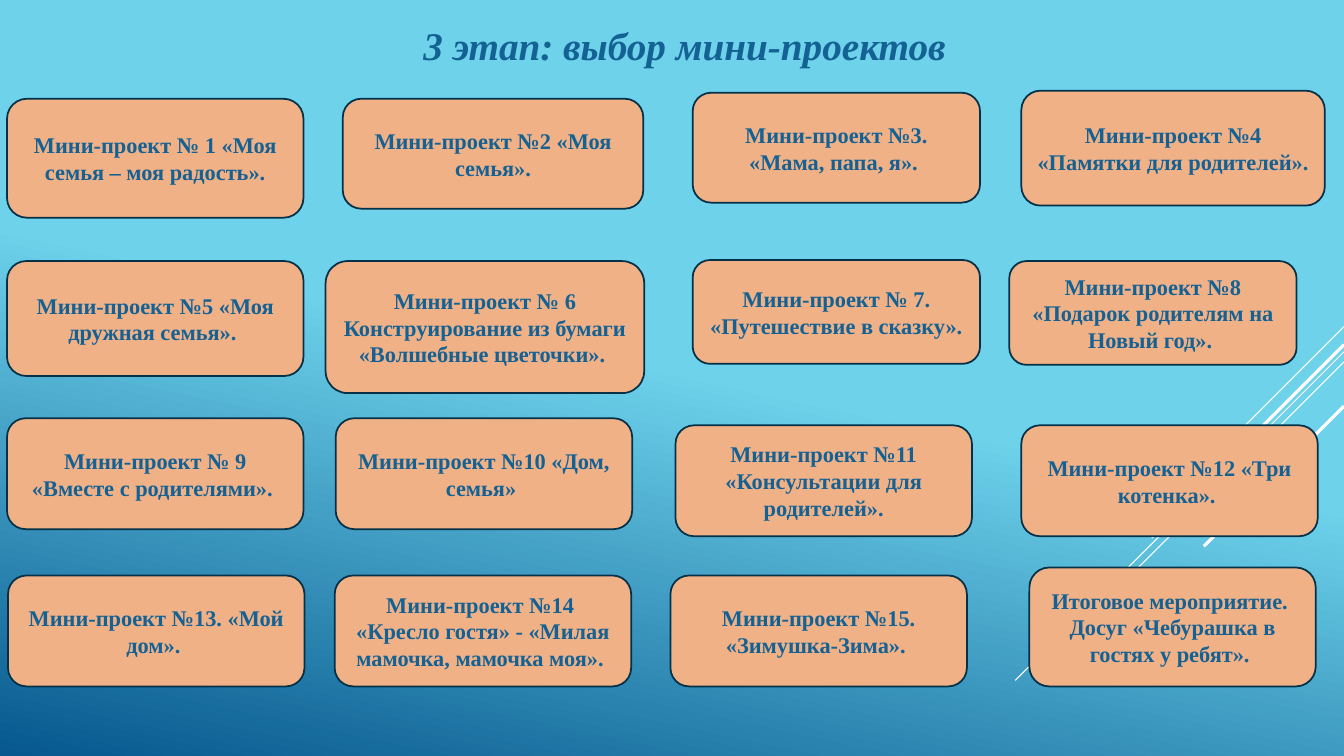
"""Build the slide that lists the mini-projects of stage three."""
from pptx import Presentation
from pptx.dml.color import RGBColor
from pptx.enum.shapes import MSO_CONNECTOR as Conn, MSO_SHAPE as Shape
from pptx.enum.text import MSO_ANCHOR as Anchor, MSO_AUTO_SIZE as Fit, PP_ALIGN as Align
from pptx.oxml.ns import qn
from pptx.util import Pt
from lxml.etree import SubElement

PX = 9144
WIDE, HIGH = 1333, 750
FONT = "Times New Roman"
INK, PEACH, EDGE, WHITE = "146194", "F1B187", "043148", "FFFFFF"
SKY = [("6ED2EB", 0.49), ("06588E", 1)]
ANGLE = 102

TITLE = "3 этап: выбор мини-проектов"
TITLE_BOX = (410, 16, 554, 57)

# top at right edge, run, weight
RAYS = [(324, 100, 0.75), (349, 326, 0.75), (359, 207, 0.75),
        (342, 191, 2.25), (403, 139, 2.25)]

CARDS = [
    ("Мини-проект № 1 «Моя семья – моя радость».", (7, 98, 294, 118)),
    ("Мини-проект №2 «Моя семья».", (340, 98, 298, 109)),
    ("Мини-проект №3. «Мама, папа, я». ", (687, 92, 285, 109)),
    ("Мини-проект №4 «Памятки для родителей». ", (1013, 90, 301, 114)),
    ("Мини-проект №5 «Моя дружная семья». ", (7, 259, 294, 114)),
    ("Мини-проект № 6 Конструирование из бумаги «Волшебные цветочки». ",
     (323, 259, 316, 131)),
    ("Мини-проект № 7. «Путешествие в сказку».", (687, 258, 285, 103)),
    ("Мини-проект №8 «Подарок родителям на Новый год». ", (1001, 259, 285, 103)),
    ("Мини-проект № 9 «Вместе с родителями». ", (7, 415, 294, 110)),
    ("Мини-проект №10 «Дом, семья» ", (333, 415, 294, 110)),
    ("Мини-проект №11 «Консультации для родителей».", (670, 422, 294, 110)),
    ("Мини-проект №12 «Три котенка». ", (1013, 422, 294, 110)),
    ("Мини-проект №13. «Мой дом». ", (8, 571, 294, 110)),
    ("Мини-проект №14 \n«Кресло гостя» - «Милая мамочка, мамочка моя». ",
     (332, 571, 294, 110)),
    ("Мини-проект №15. «Зимушка-Зима». ", (665, 571, 294, 110)),
    ("Итоговое мероприятие.  Досуг «Чебурашка в гостях у ребят». ",
     (1021, 563, 284, 118)),
]


def emu(*nums):
    return [n * PX for n in nums]


def tint(obj, code):
    obj.rgb = RGBColor.from_string(code)


def write(para, text, size, slant=False):
    for i, part in enumerate(text.split("\n")):
        if i:
            para.add_line_break()
        run = para.add_run()
        run.text = part
        font = run.font
        font.name, font.size, font.bold, font.italic = FONT, Pt(size), True, slant
        tint(font.color, INK)


def paint(slide):
    fill = slide.background.fill
    fill.gradient()
    fill.gradient_angle = 360 - ANGLE
    for stop, (code, place) in zip(fill.gradient_stops, SKY):
        tint(stop.color, code)
        stop.position = place


def head(slide):
    title = slide.shapes.title
    title.left, title.top, title.width, title.height = emu(*TITLE_BOX)
    frame = title.text_frame
    frame.word_wrap = False
    frame.auto_size = Fit.NONE
    frame.vertical_anchor = Anchor.TOP
    para = frame.paragraphs[0]
    para.alignment = Align.LEFT
    write(para, TITLE, 28, True)


def ray(slide, top, run, weight):
    ends = emu(WIDE, top, WIDE - run, top + run)
    line = slide.shapes.add_connector(Conn.STRAIGHT, *ends)
    tint(line.line.color, WHITE)
    line.line.width = Pt(weight)
    SubElement(line._element.spPr, qn("a:effectLst"))


def card(slide, text, box):
    shape = slide.shapes.add_shape(Shape.ROUNDED_RECTANGLE, *emu(*box))
    shape.shadow.inherit = False
    shape.fill.solid()
    tint(shape.fill.fore_color, PEACH)
    tint(shape.line.color, EDGE)
    shape.line.width = Pt(1.25)
    frame = shape.text_frame
    frame.word_wrap = True
    frame.vertical_anchor = Anchor.MIDDLE
    para = frame.paragraphs[0]
    para.alignment = Align.CENTER
    write(para, text, 16)


def main():
    deck = Presentation()
    deck.slide_width, deck.slide_height = emu(WIDE, HIGH)
    slide = deck.slides.add_slide(deck.slide_layouts[5])
    paint(slide)
    head(slide)
    for item in RAYS:
        ray(slide, *item)
    for item in CARDS:
        card(slide, *item)
    deck.save("out.pptx")


if __name__ == "__main__":
    main()
